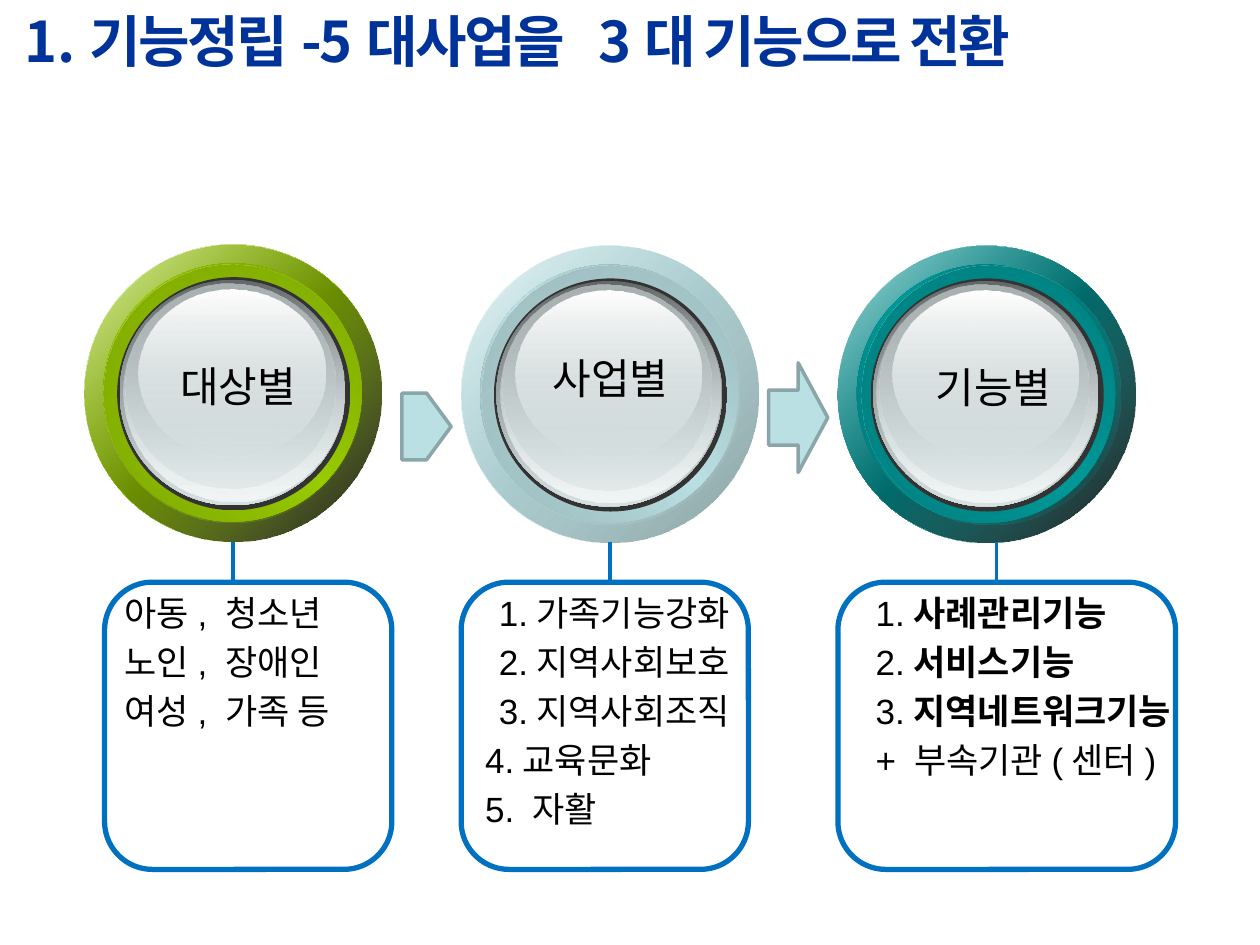
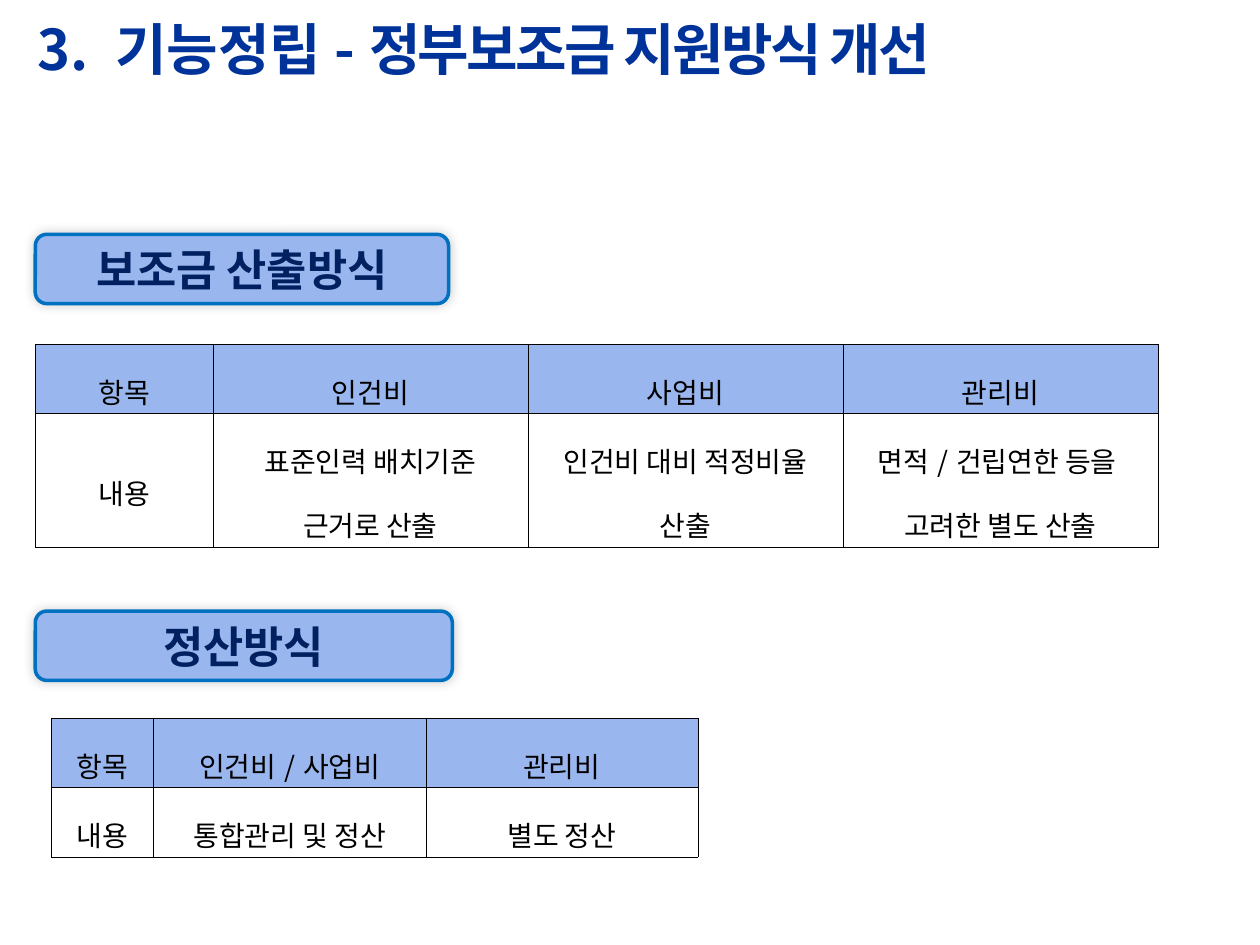
import pptx
import pptx.dml.color
import pptx.enum.shapes
import pptx.enum.text
import pptx.oxml.ns
import pptx.util
from lxml import etree

Inches, Pt, qn = pptx.util.Inches, pptx.util.Pt, pptx.oxml.ns.qn
SHAPE = pptx.enum.shapes.MSO_SHAPE
ALIGN = pptx.enum.text.PP_ALIGN
ANCHOR = pptx.enum.text.MSO_ANCHOR

KOREAN = "Noto Sans CJK KR"
OUTLINE, HEADER, ARROW, ARROW_EDGE = "0070C0", "99B6EF", "BBE0E3", "8AA6A8"
TITLE = {"size": Pt(32), "bold": True, "color": "003399"}
BADGE = {"size": Pt(25), "bold": True, "color": "002060"}
LABEL = {"size": Pt(24)}
CELL = {"size": Pt(16)}
ITEM = {"size": Pt(20), "name": "Arial"}
STRONG = {**ITEM, "bold": True}


def rgb(value):
    return pptx.dml.color.RGBColor.from_string(value)


def color_node(parent, value, opacity=100):
    node = etree.SubElement(parent, qn("a:srgbClr"), val=value)
    if opacity < 100:
        etree.SubElement(node, qn("a:alpha"), val=str(opacity * 1000))


class SlideBuilder:
    def __init__(self):
        self.deck = pptx.Presentation()
        self.deck.slide_width, self.deck.slide_height = Inches(10), Inches(7.5)
        self.page = None

    def new_page(self):
        self.page = self.deck.slides.add_slide(self.deck.slide_layouts[6])

    def add_span(self, para, text, style, spacing=0):
        span = para.add_run()
        span.text = text
        formats = {"name": KOREAN, "color": "000000", "bold": False, **style}
        span.font.color.rgb = rgb(formats.pop("color"))
        for name, value in formats.items():
            setattr(span.font, name, value)
        properties = span._r.get_or_add_rPr()
        if spacing:
            properties.set("spc", str(round(spacing * 100)))
        properties.find(qn("a:latin")).addnext(
            etree.Element(qn("a:ea"), typeface=KOREAN))

    def textbox(self, left, top, width, height, inset=0.1, anchor=ANCHOR.TOP):
        box = self.page.shapes.add_textbox(
            Inches(left), Inches(top), Inches(width), Inches(height))
        frame = box.text_frame
        settings = {"word_wrap": True, "vertical_anchor": anchor,
                    "margin_left": Inches(inset), "margin_right": Inches(inset),
                    "margin_top": Inches(inset / 2),
                    "margin_bottom": Inches(inset / 2)}
        for name, value in settings.items():
            setattr(frame, name, value)
        return frame

    def title(self, start, tight, left, top):
        """Add a heading whose second part has tighter letter spacing."""
        para = self.textbox(left, top, 9.3, 0.64, anchor=ANCHOR.MIDDLE).paragraphs[0]
        self.add_span(para, start, TITLE)
        self.add_span(para, tight, TITLE, -1.5)

    def label(self, text, left, top, width):
        para = self.textbox(left, top, width, 0.5).paragraphs[0]
        para.alignment = ALIGN.CENTER
        self.add_span(para, text, LABEL)

    def items(self, rows, left, width):
        """Add rows of (indent, plain part, bold part)."""
        frame = self.textbox(left, 4.64, width, 2, inset=0)
        for index, (indent, plain, strong) in enumerate(rows):
            para = frame.add_paragraph() if index else frame.paragraphs[0]
            para.line_spacing = Pt(28)
            if indent:
                para._p.get_or_add_pPr().set("marL", str(Inches(indent)))
            self.add_span(para, plain, ITEM)
            if strong:
                self.add_span(para, strong, STRONG)

    def shape(self, kind, left, top, width, height, fill=None, line=None, weight=2):
        shape = self.page.shapes.add_shape(
            kind, Inches(left), Inches(top), Inches(width), Inches(height))
        shape.shadow.inherit = False
        if fill:
            shape.fill.solid()
            shape.fill.fore_color.rgb = rgb(fill)
        else:
            shape.fill.background()
        if line:
            shape.line.color.rgb = rgb(line)
            shape.line.width = Pt(weight)
        else:
            shape.line.fill.background()
        return shape

    def gradient(self, shape, angle, stops):
        """Fill with (position, colour, opacity) stops at a clockwise angle."""
        shape.fill.gradient()
        shape.fill.gradient_angle = 360 - angle
        stop_list = shape._element.spPr.find(qn("a:gradFill")).find(qn("a:gsLst"))
        for node in list(stop_list):
            stop_list.remove(node)
        for position, *color in stops:
            stop = etree.SubElement(stop_list, qn("a:gs"), pos=str(position * 1000))
            color_node(stop, *color)

    def dial(self, left, top, base, edge, shade, inner, corner):
        """Stack a coloured ring and a glass face."""
        layers = [
            (0, 0, 2.36, 2.36, 45, [(0, "FFFFFF"), (50, base), (100, "FFFFFF")]),
            (0, 0, 2.36, 2.36, 45, [(0, base, 32), (100, *corner)]),
            (0.15, 0.15, 2.05, 2.05, 315, [(0, edge), (50, base), (100, edge)]),
            (inner, 0.16, 2.05, 2.05, 45, [(0, shade), (100, base, 0)]),
            (0.26, 0.26, 1.85, 1.85, 90, [(0, "333333"), (100, "333333")]),
            (0.28, 0.28, 1.79, 1.79, 90, [(0, "636869"), (100, "D6E1E2")]),
            (0.31, 0.29, 1.75, 1.75, 90, [(0, "D6E1E2", 0), (100, "F1F5F5")]),
            (0.33, 0.31, 1.66, 1.63, 90, [(0, "AAB2B3"), (100, "D6E1E2", 48)]),
            (0.43, 0.36, 1.48, 1.32, 90, [(0, "FFFFFF"), (100, "D6E1E2", 38)]),
        ]
        for across, down, width, height, angle, stops in layers:
            disc = self.shape(SHAPE.OVAL, left + across, top + down, width, height)
            self.gradient(disc, angle, stops)

    def stem(self, x):
        line = self.page.shapes.add_connector(
            pptx.enum.shapes.MSO_CONNECTOR.STRAIGHT,
            Inches(x), Inches(4.3), Inches(x), Inches(4.62))
        line.line.color.rgb = rgb(OUTLINE)
        line.line.width = Pt(2)
        etree.SubElement(line._element.spPr, qn("a:effectLst"))

    def badge(self, text, top, width):
        shape = self.shape(SHAPE.ROUNDED_RECTANGLE, 0.28, top, width, 0.55,
                           HEADER, OUTLINE)
        effects = shape._element.spPr.find(qn("a:effectLst"))
        shadow = etree.SubElement(effects, qn("a:outerShdw"), blurRad=str(Pt(6)),
                                  dist="0", dir="18900000")
        color_node(shadow, "000000", 20)
        shape.text_frame.vertical_anchor = ANCHOR.MIDDLE
        para = shape.text_frame.paragraphs[0]
        para.alignment = ALIGN.CENTER
        self.add_span(para, text, BADGE)

    def border(self, cell):
        properties = cell._tc.get_or_add_tcPr()
        for side in ("a:lnL", "a:lnR", "a:lnT", "a:lnB"):
            line = etree.SubElement(properties, qn(side), w=str(Pt(0.28)))
            color_node(etree.SubElement(line, qn("a:solidFill")), "000000")

    def table(self, left, top, widths, heights, rows):
        """Build a table; a line break in a cell starts a new paragraph."""
        table = self.page.shapes.add_table(
            len(rows), len(widths), Inches(left), Inches(top),
            Inches(sum(widths)), Inches(sum(heights))).table
        table.first_row = table.horz_banding = False
        for column, width in zip(table.columns, widths):
            column.width = Inches(width)
        for row, height in zip(table.rows, heights):
            row.height = Inches(height)
        settings = {"vertical_anchor": ANCHOR.MIDDLE,
                    "margin_left": Inches(0.07), "margin_right": Inches(0.07),
                    "margin_top": Inches(0.02), "margin_bottom": Inches(0.02)}
        for row_index, texts in enumerate(rows):
            for column_index, text in enumerate(texts):
                cell = table.cell(row_index, column_index)
                for name, value in settings.items():
                    setattr(cell, name, value)
                self.border(cell)
                if row_index:
                    cell.fill.background()
                else:
                    cell.fill.solid()
                    cell.fill.fore_color.rgb = rgb(HEADER)
                frame = cell.text_frame
                for index, part in enumerate(text.split("\n")):
                    para = frame.add_paragraph() if index else frame.paragraphs[0]
                    para.alignment = ALIGN.CENTER
                    para.line_spacing = 1.6
                    self.add_span(para, part, CELL)


def functions_page(builder):
    builder.new_page()
    black = ("000000", 90)
    dials = [
        (1.94, "99CC00", "759C00", "7EA700", 0.15, black),
        (1.95, "BBE0E3", "8FACAE", "9AB8BA", 0.16, ("86A0A2",)),
        (1.95, "009999", "007575", "007E7E", 0.19, black),
    ]
    for index, dial in enumerate(dials):
        builder.dial(0.67 + 2.99 * index, *dial)
    for label in [("대상별", 1.14, 2.81, 1.5), ("사업별", 4.24, 2.75, 1.21),
                  ("기능별", 7.28, 2.82, 1.21)]:
        builder.label(*label)

    step = builder.shape(SHAPE.RIGHT_ARROW, 3.19, 3.12, 0.39, 0.53, ARROW, ARROW_EDGE)
    step.adjustments[0] = 1
    builder.shape(SHAPE.RIGHT_ARROW, 6.1, 2.88, 0.47, 0.87, ARROW, ARROW_EDGE)

    targets = [(0, "아동, 청소년", ""), (0, "노인, 장애인", ""), (0, "여성, 가족 등", "")]
    projects = [(0.11, "1.가족기능강화", ""), (0.11, "2.지역사회보호", ""),
                (0.11, "3.지역사회조직", ""), (0, "4.교육문화", ""), (0, "5. 자활", "")]
    functions = [(0, "1.", "사례관리기능"), (0, "2.", "서비스기능"),
                 (0, "3.", "지역네트워크기능"), (0, "+ 부속기관(센터)", "")]
    columns = [(0.83, 2.28, 1.85, 0.99, targets), (3.66, 2.28, 4.84, 3.85, projects),
               (6.65, 2.68, 7.91, 6.95, functions)]
    for left, width, stem, text_left, rows in columns:
        builder.items(rows, text_left, 2.5)
        builder.shape(SHAPE.ROUNDED_RECTANGLE, left, 4.62, width, 2.28,
                      line=OUTLINE, weight=3)
        builder.stem(stem)
    builder.title("1.", "기능정립-5대사업을  3대 기능으로 전환", 0.1, 0)


def subsidy_page(builder):
    builder.new_page()
    builder.badge("보조금 산출방식", 1.86, 3.28)
    builder.table(0.28, 2.73, [1.41] + [2.5] * 3, [0.55, 1.02], [
        ["항목", "인건비", "사업비", "관리비"],
        ["내용", "표준인력 배치기준\n근거로 산출", "인건비 대비 적정비율 산출",
         "면적/건립연한 등을 \n고려한 별도 산출"],
    ])
    builder.badge("정산방식", 4.85, 3.31)
    builder.table(0.41, 5.7, [0.81, 2.16, 2.16], [0.55, 0.55], [
        ["항목", "인건비/사업비", "관리비"],
        ["내용", "통합관리 및 정산", "별도 정산"],
    ])
    builder.title("3. 기능정립-", "정부보조금 지원방식 개선", 0.2, 0.06)


def main():
    builder = SlideBuilder()
    functions_page(builder)
    subsidy_page(builder)
    builder.deck.save("out.pptx")


if __name__ == "__main__":
    main()
